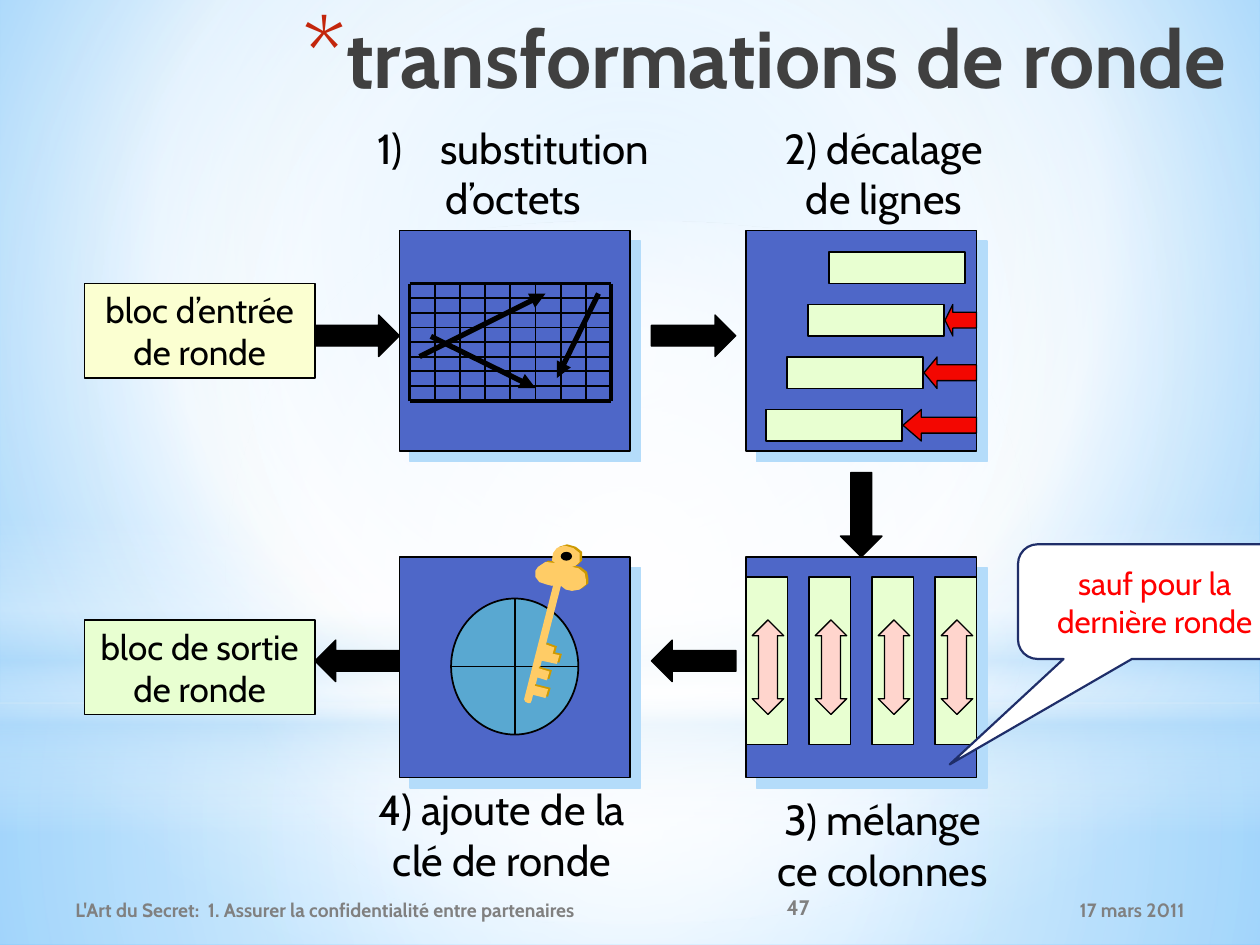
from lxml import etree
from pptx import Presentation
from pptx.dml.color import RGBColor
from pptx.enum import shapes, text
from pptx.oxml import parse_xml
from pptx.oxml.ns import nsdecls, qn
from pptx.util import Inches, Pt

FONT = "Cabin"
BLACK = RGBColor(0x00, 0x00, 0x00)
WHITE = RGBColor(0xFF, 0xFF, 0xFF)
GREY = RGBColor(0x80, 0x80, 0x80)
TITLE = RGBColor(0x40, 0x40, 0x40)
BULLET = RGBColor(0xC3, 0x26, 0x0C)
BLUE = RGBColor(0x4E, 0x67, 0xC8)
NAVY = RGBColor(0x1F, 0x2E, 0x69)
TEAL = RGBColor(0x59, 0xA8, 0xD1)
PALE = RGBColor(0xB4, 0xDC, 0xFA)
SKY = RGBColor(0x9E, 0xD5, 0xFF)
DEEP_SKY = RGBColor(0x5B, 0xB9, 0xFF)
YELLOW = RGBColor(0xFB, 0xFF, 0xD1)
GREEN = RGBColor(0xE8, 0xFF, 0xD1)
PINK = RGBColor(0xFF, 0xD5, 0xCD)
RED = RGBColor(0xF3, 0x07, 0x01)
PURE_RED = RGBColor(0xFF, 0x00, 0x00)
GOLD = RGBColor(0xFF, 0xCC, 0x66)
DARK_GOLD = RGBColor(0xCC, 0x99, 0x00)

MSO = shapes.MSO_SHAPE
LEFT, CENTER, RIGHT = text.PP_ALIGN.LEFT, text.PP_ALIGN.CENTER, text.PP_ALIGN.RIGHT
TOP, MIDDLE = text.MSO_ANCHOR.TOP, text.MSO_ANCHOR.MIDDLE

CENTERED = (50, 50, 50, 50)
BOW = [
    (4.46, 4.63), (4.51, 4.67), (4.56, 4.68), (4.62, 4.67), (4.67, 4.63),
    (4.67, 4.59), (4.66, 4.54), (4.61, 4.5), (4.56, 4.49), (4.59, 4.48),
    (4.62, 4.45), (4.62, 4.38), (4.57, 4.34), (4.5, 4.32), (4.44, 4.34),
    (4.41, 4.38), (4.4, 4.44), (4.43, 4.46), (4.35, 4.45), (4.29, 4.49),
    (4.27, 4.52), (4.27, 4.57), (4.3, 4.61), (4.36, 4.63), (4.4, 4.64),
]
SHAFT = [
    (4.44, 4.58), (4.42, 4.58), (4.4, 4.61), (4.16, 5.55), (4.17, 5.57),
    (4.19, 5.58), (4.21, 5.58), (4.22, 5.56), (4.46, 4.62), (4.46, 4.6),
]
TEETH = [(4.25, 5.43, 0.12), (4.28, 5.29, 0.1), (4.32, 5.16, 0.14), (4.34, 5.1, 0.08)]


def set_text(tf, lines, size=24, color=BLACK, bold=False, align=CENTER, anchor=TOP, wrap=True):
    tf.word_wrap = wrap
    tf.vertical_anchor = anchor
    for i, line in enumerate(lines):
        p = tf.paragraphs[0] if i == 0 else tf.add_paragraph()
        p.alignment = align
        r = p.add_run()
        r.text = line
        r.font.name = FONT
        r.font.size = Pt(size)
        r.font.bold = bold
        r.font.color.rgb = color


def add_text(parent, at, lines, **fmt):
    sp = parent.add_textbox(*map(Inches, at))
    set_text(sp.text_frame, lines, **fmt)
    return sp


def set_bullet(p, indent, *marks):
    pPr = p._p.get_or_add_pPr()
    pPr.set("marL", str(Inches(indent)))
    pPr.set("indent", str(-Inches(indent)))
    for mark in marks:
        pPr.append(parse_xml(mark.replace("/>", f" {nsdecls('a')}/>", 1) if mark.endswith("/>")
                             else mark.replace(">", f" {nsdecls('a')}>", 1)))


def style(sp, fill, line=BLACK, width=0.75):
    sp.shadow.inherit = False
    sp.fill.solid()
    sp.fill.fore_color.rgb = fill
    if line is None:
        sp.line.fill.background()
    else:
        sp.line.color.rgb = line
        sp.line.width = Pt(width)
    return sp


def add_shape(parent, kind, at, fill, line=BLACK, width=0.75, rotation=0, adj=()):
    sp = style(parent.add_shape(kind, *map(Inches, at)), fill, line, width)
    sp.rotation = rotation
    for i, value in enumerate(adj):
        sp.adjustments[i] = value
    return sp


def add_outline(parent, points, fill, dx=0, dy=0):
    pts = [(Inches(x + dx), Inches(y + dy)) for x, y in points]
    fb = parent.build_freeform(*pts[0])
    fb.add_line_segments(pts[1:], close=True)
    return style(fb.convert_to_shape(), fill, None)


def add_line(parent, x1, y1, x2, y2, width=1, arrow=False):
    cx = parent.add_connector(shapes.MSO_CONNECTOR.STRAIGHT, *map(Inches, (x1, y1, x2, y2)))
    cx.line.color.rgb = BLACK
    cx.line.width = Pt(width)
    if arrow:
        etree.SubElement(cx.line._get_or_add_ln(), qn("a:tailEnd"), type="triangle")
    etree.SubElement(cx._element.spPr, qn("a:effectLst"))


def set_gradient(props, stops, center=None):
    gs = "".join(
        f'<a:gs pos="{pos * 1000}"><a:srgbClr val="{color}">'
        f'<a:alpha val="{alpha * 1000}"/></a:srgbClr></a:gs>' for pos, color, alpha in stops)
    if center:
        l, t, r, b = (v * 1000 for v in center)
        way = f'<a:path path="circle"><a:fillToRect l="{l}" t="{t}" r="{r}" b="{b}"/></a:path>'
    else:
        way = '<a:lin ang="5400000" scaled="0"/>'
    grad = parse_xml(f'<a:gradFill {nsdecls("a")} rotWithShape="1">'
                     f'<a:gsLst>{gs}</a:gsLst>{way}</a:gradFill>')
    props.replace(props.find(qn("a:solidFill")), grad)


def add_glow(parent, kind, at, stops, center=None):
    sp = add_shape(parent, kind, at, WHITE, None)
    set_gradient(sp._element.spPr, stops, center)


def draw_background(s):
    s.background.fill.solid()
    set_gradient(s._element.find(".//" + qn("p:bgPr")),
                 [(0, SKY, 100), (60, WHITE, 100), (100, DEEP_SKY, 100)], (20, 10, 20, 60))
    add_glow(s.shapes, MSO.RECTANGLE, (0, 5.58, 10, 1.92),
             [(0, WHITE, 91), (37, WHITE, 76), (100, PALE, 79)], CENTERED)
    add_glow(s.shapes, MSO.RECTANGLE, (0, 0, 10, 5.58),
             [(0, WHITE, 89), (48, WHITE, 62), (100, PALE, 79)], CENTERED)
    add_glow(s.shapes, MSO.RECTANGLE, (0, 4.12, 10, 2.5),
             [(0, WHITE, 0), (29, WHITE, 30), (45, PALE, 40),
              (55, WHITE, 26), (65, PALE, 60), (100, WHITE, 0)])
    add_glow(s.shapes, MSO.OVAL, (0, 1.75, 10, 5.58),
             [(0, WHITE, 100), (56, WHITE, 0)], CENTERED)


def draw_title(s):
    sp = s.shapes.title
    sp.left, sp.top, sp.width, sp.height = map(Inches, (0, 0.01, 9.83, 1.25))
    set_text(sp.text_frame, ["transformations de ronde"], size=46, color=TITLE, bold=True, align=RIGHT)
    set_bullet(sp.text_frame.paragraphs[0], 0.35,
               f'<a:buClr><a:srgbClr val="{BULLET}"/></a:buClr>', '<a:buSzPct val="128000"/>',
               f'<a:buFont typeface="{FONT}"/>', '<a:buChar char="*"/>')
    s.shapes._spTree.append(sp._element)


def add_panel(s, x, y):
    g = s.shapes.add_group_shape().shapes
    sp = add_shape(g, MSO.RECTANGLE, (x, y, 1.83, 1.75), BLUE)
    sp._element.spPr.find(qn("a:effectLst")).append(parse_xml(
        f'<a:outerShdw {nsdecls("a")} blurRad="0" dist="{Pt(8.5)}" dir="2700000" algn="ctr" '
        f'rotWithShape="0"><a:srgbClr val="{PALE}"/></a:outerShdw>'))
    return g


def draw_key_step(s):
    g = add_panel(s, 3.17, 4.42)
    add_shape(g, MSO.OVAL, (3.58, 4.75, 1.01, 1.08), TEAL, width=1)
    add_line(g, 4.09, 4.75, 4.09, 5.83)
    add_line(g, 3.58, 5.29, 4.59, 5.29)
    add_outline(g, BOW, DARK_GOLD)
    add_outline(g, BOW, GOLD, -0.02, 0.01)
    add_outline(g, SHAFT, GOLD)
    add_shape(g, MSO.OVAL, (4.45, 4.38, 0.09, 0.07), BLACK, None)
    for color, dx, dy in ((DARK_GOLD, 0, 0), (GOLD, -0.02, 0.01)):
        for x, y, w in TEETH:
            tooth = [(x, y), (x - 0.02, y + 0.07), (x + w - 0.02, y + 0.1), (x + w, y + 0.03)]
            add_outline(g, tooth, color, dx, dy)


def draw_shift_step(s):
    g = add_panel(s, 5.92, 1.83)
    for i in range(4):
        add_shape(g, MSO.RECTANGLE, (6.58 - i / 6, 2 + i * 5 / 12, 1.08, 0.25), GREEN)
    for i in range(1, 4):
        w = 1 / 12 + i / 6
        add_shape(g, MSO.LEFT_ARROW, (7.75 - w, 2 + i * 5 / 12, w, 0.25), RED, adj=(0.5, w))


def draw_substitution_step(s):
    g = add_panel(s, 3.17, 1.83)
    for ends in ((3.42, 2.67, 4.25, 3.08), (3.33, 2.83, 4.33, 2.33), (4.75, 2.33, 4.42, 3)):
        add_line(g, *ends, width=3, arrow=True)
    left, top, right, bottom = 3.25, 2.25, 4.85, 3.18
    for i in range(9):
        width = 2.25 if i in (0, 8) else 1
        x = left + i * (right - left) / 8
        y = top + i * (bottom - top) / 8
        add_line(g, left, y, right, y, width)
        add_line(g, x, top, x, bottom, width)


def draw_mix_step(s):
    g = add_panel(s, 5.92, 4.42)
    for i in range(4):
        x = 5.92 + i * 0.5
        add_shape(g, MSO.RECTANGLE, (x, 4.58, 0.33, 1.33), GREEN)
        add_shape(g, MSO.UP_DOWN_ARROW, (x + 0.05, 4.92, 0.25, 0.75), PINK, adj=(0.5, 0.6))


def main():
    prs = Presentation()
    prs.slide_width, prs.slide_height = Inches(10), Inches(7.5)
    s = prs.slides.add_slide(prs.slide_layouts[5])
    draw_background(s)
    footer = dict(size=11, color=GREY, bold=True, anchor=MIDDLE)
    add_text(s.shapes, (6.75, 7.02, 2.75, 0.4), ["17 mars 2011"], **{**footer, "align": RIGHT})
    add_text(s.shapes, (0.5, 7.02, 5.42, 0.4),
             ["L'Art du Secret:  1. Assurer la confidentialité entre partenaires"],
             **{**footer, "align": LEFT})
    draw_title(s)
    for y, name, fill in ((2.25, "bloc d’entrée", YELLOW), (4.92, "bloc de sortie", GREEN)):
        sp = add_shape(s.shapes, MSO.RECTANGLE, (0.67, y, 1.83, 0.75), fill)
        set_text(sp.text_frame, [name, "de ronde"], size=20, anchor=MIDDLE, wrap=False)
    for x, y, turn in ((2.5, 2.5, 0), (5.17, 2.5, 0), (2.5, 5.08, 180), (5.17, 5.08, 180), (6.5, 3.92, 90)):
        add_shape(s.shapes, MSO.RIGHT_ARROW, (x, y, 0.67, 0.33), BLACK, rotation=turn)
    first = add_text(s.shapes, (2.83, 0.92, 2.49, 0.91), ["substitution", "d’octets"], wrap=False)
    set_bullet(first.text_frame.paragraphs[0], 0.5, '<a:buAutoNum type="arabicParenR"/>')
    add_text(s.shapes, (6.04, 0.92, 1.95, 0.91), ["2) décalage", "de lignes"], wrap=False)
    add_text(s.shapes, (6.02, 6.25, 1.97, 0.91), ["3) mélange", "ce colonnes"], wrap=False)
    add_text(s.shapes, (2.72, 6.17, 2.53, 0.91), ["4) ajoute de la", "clé de ronde"])
    draw_key_step(s)
    draw_shift_step(s)
    draw_substitution_step(s)
    draw_mix_step(s)
    add_text(s.shapes, (5.92, 7, 0.83, 0.4), ["47"], **{**footer, "size": 12})
    sp = add_shape(s.shapes, MSO.ROUNDED_RECTANGULAR_CALLOUT, (8.08, 4.32, 2.17, 0.91), WHITE,
                   NAVY, 1.25, adj=(-0.75, 1.42, 0.17))
    set_text(sp.text_frame, ["sauf pour la dernière ronde"], size=18, color=PURE_RED, anchor=MIDDLE)
    prs.save("out.pptx")


if __name__ == "__main__":
    main()
